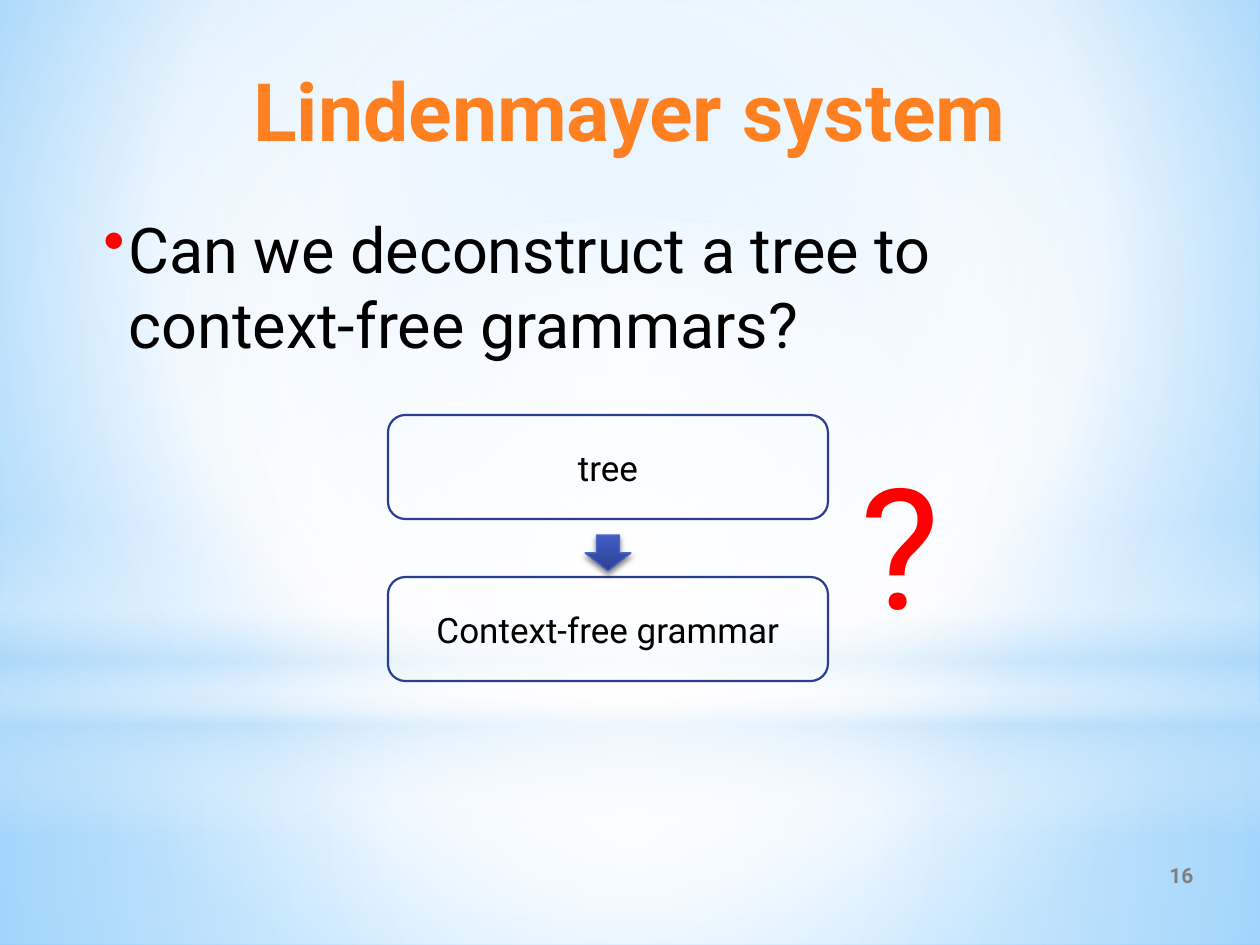
"""Build the Lindenmayer system slide with its tree to grammar diagram."""
from lxml import etree
from pptx import Presentation
from pptx.dml.color import RGBColor
from pptx.enum.shapes import MSO_SHAPE as Shape
from pptx.enum.text import MSO_ANCHOR as Anchor, PP_ALIGN as Align
from pptx.oxml import parse_xml
from pptx.oxml.ns import nsdecls, qn
from pptx.util import Emu, Pt

EMU_PER_PX = 914400 / 126
PAGE_WIDTH, PAGE_HEIGHT = 1260, 945
FONT = "Roboto"
COLORS = {
    "title": "FF8021", "text": "000000", "accent": "FF0000", "number": "808080",
    "outline": "2A3E8E", "arrow_line": "4E67C8", "arrow_top": "435EC5",
    "arrow_end": "2B4092", "white": "FFFFFF", "haze": "B4DCFA",
    "sky": "9ED5FF", "deep_sky": "5BB9FF",
}
CENTER = (50, 50, 50, 50)


def px(length):
    """Turn pixels into EMU."""
    return Emu(round(length * EMU_PER_PX))


def color(name):
    """Look up a named colour."""
    return RGBColor.from_string(COLORS[name])


def set_gradient(fill, properties, stops, focus=None):
    """Fill with (percent, colour, opacity) stops, downwards or out from a focus."""
    fill.solid()
    marks = "".join(
        f'<a:gs pos="{place * 1000}"><a:srgbClr val="{COLORS[name]}">'
        f'<a:alpha val="{opacity * 1000}"/></a:srgbClr></a:gs>'
        for place, name, opacity in stops
    )
    if focus:
        sides = " ".join(f'{side}="{share * 1000}"' for side, share in zip("ltrb", focus))
        course = f'<a:path path="circle"><a:fillToRect {sides}/></a:path>'
    else:
        course = '<a:lin ang="5400000" scaled="0"/>'
    gradient = parse_xml(
        f'<a:gradFill {nsdecls("a")} rotWithShape="1"><a:gsLst>{marks}</a:gsLst>{course}</a:gradFill>'
    )
    properties.replace(properties.find(qn("a:solidFill")), gradient)


def add_glow(slide, kind, box, stops, focus=None):
    """Add a translucent background shape."""
    glow = slide.shapes.add_shape(kind, *map(px, box))
    glow.shadow.inherit = False
    glow.line.fill.background()
    set_gradient(glow.fill, glow.element.spPr, stops, focus)


def write(shape, text, size, ink, align=Align.LEFT, anchor=Anchor.TOP, bold=False):
    """Write one styled paragraph into a shape and return it."""
    frame = shape.text_frame
    frame.word_wrap = True
    frame.vertical_anchor = anchor
    para = frame.paragraphs[0]
    para.text = text
    para.alignment = align
    para.font.name = FONT
    para.font.size = Pt(size)
    para.font.bold = bold
    para.font.color.rgb = color(ink)
    return para


def add_text(slide, box, *content, **style):
    """Add a text box and return its paragraph."""
    return write(slide.shapes.add_textbox(*map(px, box)), *content, **style)


def add_bullet(para):
    """Give a paragraph a hanging red bullet."""
    para.space_after = Pt(3)
    properties = para._p.get_or_add_pPr()
    properties.set("marL", str(px(32)))
    properties.set("indent", str(px(-25)))
    tint = etree.SubElement(properties, qn("a:buClr"))
    etree.SubElement(tint, qn("a:srgbClr"), val=COLORS["accent"])
    etree.SubElement(properties, qn("a:buChar"), char="•")


def add_step(slide, top, label):
    """Add an outlined step of the diagram."""
    step = slide.shapes.add_shape(Shape.ROUNDED_RECTANGLE, px(388), px(top), px(440), px(104))
    step.shadow.inherit = False
    step.fill.background()
    step.line.color.rgb = color("outline")
    step.line.width = Pt(1.25)
    write(step, label, 20, "text", Align.CENTER, Anchor.MIDDLE)


def add_down_arrow(slide, box):
    """Add the shaded arrow between the steps."""
    arrow = slide.shapes.add_shape(Shape.DOWN_ARROW, *map(px, box))
    arrow.line.color.rgb = color("arrow_line")
    arrow.line.width = Pt(0.75)
    properties = arrow.element.spPr
    set_gradient(arrow.fill, properties, [(0, "arrow_top", 100), (100, "arrow_end", 100)])
    arrow.shadow.inherit = False
    shadow = parse_xml(
        f'<a:outerShdw {nsdecls("a")} blurRad="{Pt(3.1)}" dist="{Pt(1.8)}" dir="5400000" '
        f'rotWithShape="0"><a:srgbClr val="{COLORS["text"]}"><a:alpha val="45000"/>'
        "</a:srgbClr></a:outerShdw>"
    )
    properties.find(qn("a:effectLst")).append(shadow)


def add_backdrop(slide):
    """Paint the sky, the horizon and the glow."""
    fill = slide.background.fill
    fill.solid()
    set_gradient(fill, slide.element.cSld.find(qn("p:bg")).find(qn("p:bgPr")),
                 [(0, "sky", 100), (60, "white", 100), (100, "deep_sky", 100)], (20, 10, 20, 60))
    horizon = 703
    add_glow(slide, Shape.RECTANGLE, (0, horizon, PAGE_WIDTH, PAGE_HEIGHT - horizon),
             [(0, "white", 91), (37, "white", 76), (100, "haze", 79)], CENTER)
    add_glow(slide, Shape.RECTANGLE, (0, 0, PAGE_WIDTH, horizon),
             [(0, "white", 89), (48, "white", 62), (100, "haze", 79)], CENTER)
    add_glow(slide, Shape.RECTANGLE, (0, 519, PAGE_WIDTH, 315),
             [(0, "white", 0), (29, "white", 30), (45, "haze", 40),
              (55, "white", 26), (65, "haze", 60), (100, "white", 0)])
    add_glow(slide, Shape.OVAL, (0, 220, PAGE_WIDTH, 703),
             [(0, "white", 100), (56, "white", 0)], CENTER)


def main():
    """Build and save the slide."""
    deck = Presentation()
    deck.slide_width, deck.slide_height = px(PAGE_WIDTH), px(PAGE_HEIGHT)
    slide = deck.slides.add_slide(deck.slide_layouts[6])
    add_backdrop(slide)
    add_text(slide, (44, 55, 1171, 110), "Lindenmayer system", 46, "title",
             align=Align.CENTER, bold=True)
    add_bullet(add_text(slide, (84, 204, 1091, 684),
                        "Can we deconstruct a tree to context-free grammars?", 36, "text"))
    add_text(slide, (954, 850, 252, 50), "16", 12, "number",
             align=Align.RIGHT, anchor=Anchor.MIDDLE, bold=True)
    for index, label in enumerate(("tree", "Context-free grammar")):
        add_step(slide, 415 + index * 162, label)
    add_down_arrow(slide, (585, 535, 46, 36))
    add_text(slide, (848, 435, 248, 217), "?", 96, "accent")
    deck.save("out.pptx")


if __name__ == "__main__":
    main()
